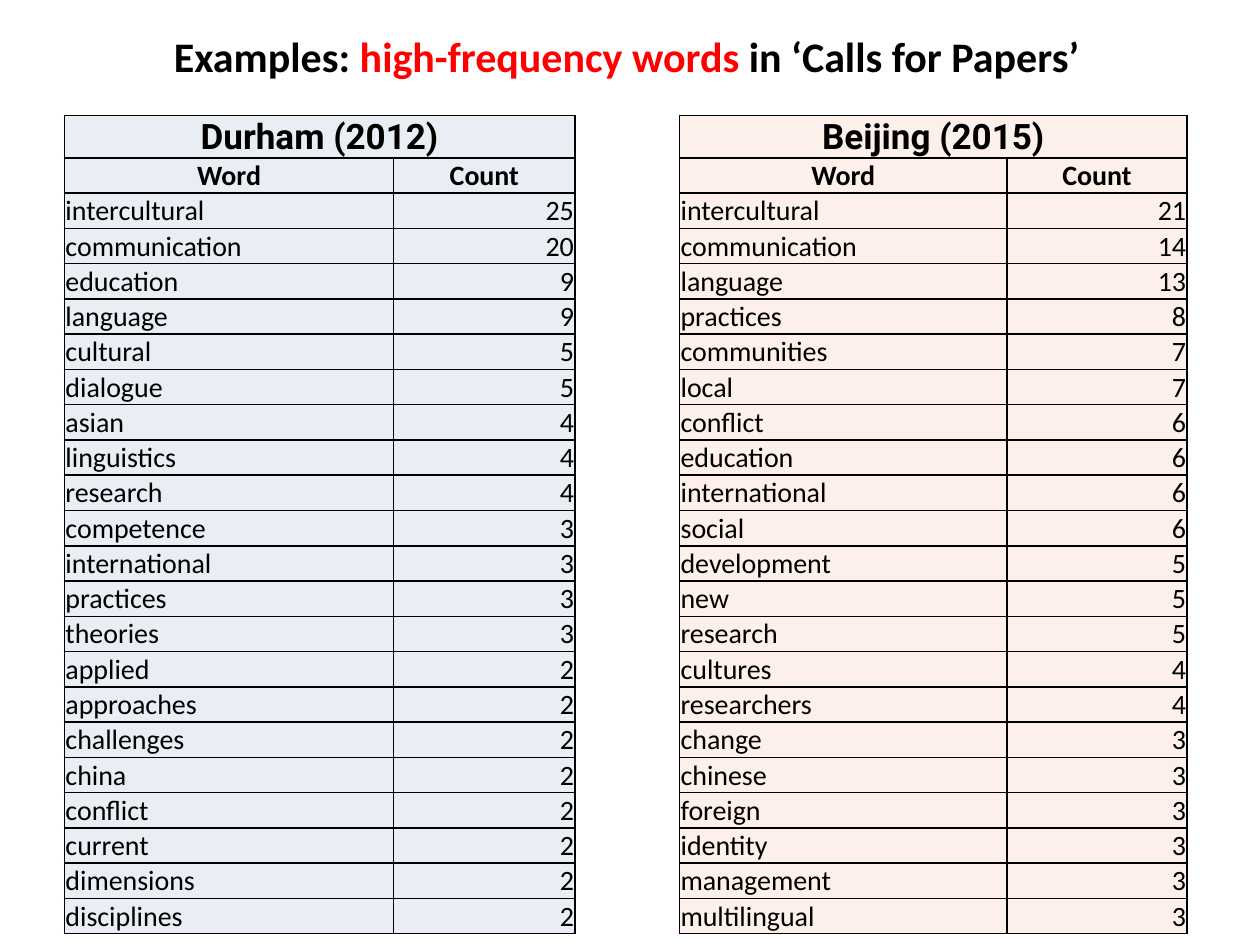
from lxml.etree import SubElement
from pptx import Presentation
from pptx.dml.color import RGBColor
from pptx.enum.text import MSO_ANCHOR, PP_ALIGN
from pptx.oxml.ns import qn
from pptx.util import Cm, Pt

BLACK = RGBColor(0x00, 0x00, 0x00)
RED = RGBColor(0xFF, 0x00, 0x00)
PALE_BLUE = RGBColor(0xE9, 0xED, 0xF4)
PALE_ORANGE = RGBColor(0xFD, 0xEF, 0xE9)

TITLE_FONT = {"name": "Calibri", "size": Pt(24), "bold": True}
PLACE_FONT = {"name": "Roboto", "size": Pt(20), "bold": True}
HEADING_FONT = {"name": "Calibri", "size": Pt(16), "bold": True}
BODY_FONT = {"name": "Calibri", "size": Pt(16), "bold": False}
CELL_FORMAT = {
    "margin_left": Cm(0.02), "margin_right": Cm(0.02),
    "margin_top": Cm(0.02), "margin_bottom": 0,
}
WORD_SHARE = 0.645

DURHAM = [
    ("intercultural", 25), ("communication", 20), ("education", 9),
    ("language", 9), ("cultural", 5), ("dialogue", 5), ("asian", 4),
    ("linguistics", 4), ("research", 4), ("competence", 3),
    ("international", 3), ("practices", 3), ("theories", 3), ("applied", 2),
    ("approaches", 2), ("challenges", 2), ("china", 2), ("conflict", 2),
    ("current", 2), ("dimensions", 2), ("disciplines", 2),
]
BEIJING = [
    ("intercultural", 21), ("communication", 14), ("language", 13),
    ("practices", 8), ("communities", 7), ("local", 7), ("conflict", 6),
    ("education", 6), ("international", 6), ("social", 6),
    ("development", 5), ("new", 5), ("research", 5), ("cultures", 4),
    ("researchers", 4), ("change", 3), ("chinese", 3), ("foreign", 3),
    ("identity", 3), ("management", 3), ("multilingual", 3),
]


def set_attributes(target, values):
    for name, value in values.items():
        setattr(target, name, value)


def add_span(para, text, font, color=BLACK):
    span = para.add_run()
    span.text = text
    set_attributes(span.font, font)
    span.font.color.rgb = color


def add_borders(cell):
    properties = cell._tc.get_or_add_tcPr()
    for position, side in enumerate(("lnL", "lnR", "lnT", "lnB")):
        line = SubElement(properties, qn(f"a:{side}"), w=str(Pt(1)))
        fill = SubElement(line, qn("a:solidFill"))
        SubElement(fill, qn("a:srgbClr"), val=str(BLACK))
        properties.insert(position, line)  # borders come before the fill


def fill_cell(cell, text, font, align, anchor, color):
    set_attributes(cell, CELL_FORMAT)
    cell.vertical_anchor = anchor
    cell.fill.solid()
    cell.fill.fore_color.rgb = color
    add_borders(cell)
    para = cell.text_frame.paragraphs[0]
    para.alignment = align
    if text:
        add_span(para, text, font)


def place_title(page, left, top, width, height):
    title = page.shapes.title
    set_attributes(title, {"left": left, "top": top, "width": width, "height": height})
    title.text_frame.vertical_anchor = MSO_ANCHOR.MIDDLE
    para = title.text_frame.paragraphs[0]
    para.alignment = PP_ALIGN.CENTER
    add_span(para, "Examples: ", TITLE_FONT)
    add_span(para, "high-frequency words", TITLE_FONT, RED)
    add_span(para, " in ‘Calls for Papers’ ", TITLE_FONT)


def place_word_table(page, place, counts, color, left, top, width, height):
    rows = [(place, ""), ("Word", "Count")]
    rows += [(word, str(count)) for word, count in counts]
    frame = page.shapes.add_table(len(rows), 2, left, top, width, height)
    table = frame.table
    table.columns[0].width = int(width * WORD_SHARE)
    table.columns[1].width = width - table.columns[0].width
    for index, texts in enumerate(rows):
        is_heading = index < 2
        table.rows[index].height = Cm(0.64) if is_heading else Cm(0.48)
        font = PLACE_FONT if index == 0 else HEADING_FONT if is_heading else BODY_FONT
        anchor = MSO_ANCHOR.MIDDLE if is_heading else MSO_ANCHOR.TOP
        for column, side in enumerate((PP_ALIGN.LEFT, PP_ALIGN.RIGHT)):
            align = PP_ALIGN.CENTER if is_heading else side
            fill_cell(table.cell(index, column), texts[column], font, align, anchor, color)
    table.cell(0, 0).merge(table.cell(0, 1))
    frame.height = height


def main():
    deck = Presentation()
    deck.slide_width, deck.slide_height = Cm(25.4), Cm(19.05)
    page = deck.slides.add_slide(deck.slide_layouts[5])
    place_title(page, Cm(1.3), Cm(0.53), Cm(22.86), Cm(1.2))
    top, height = Cm(2.33), Cm(16.36)
    place_word_table(page, "Durham (2012)", DURHAM, PALE_BLUE,
                     Cm(1.3), top, Cm(10.29), height)
    place_word_table(page, "Beijing (2015)", BEIJING, PALE_ORANGE,
                     Cm(13.7), top, Cm(10.23), height)
    deck.save("out.pptx")


if __name__ == "__main__":
    main()
